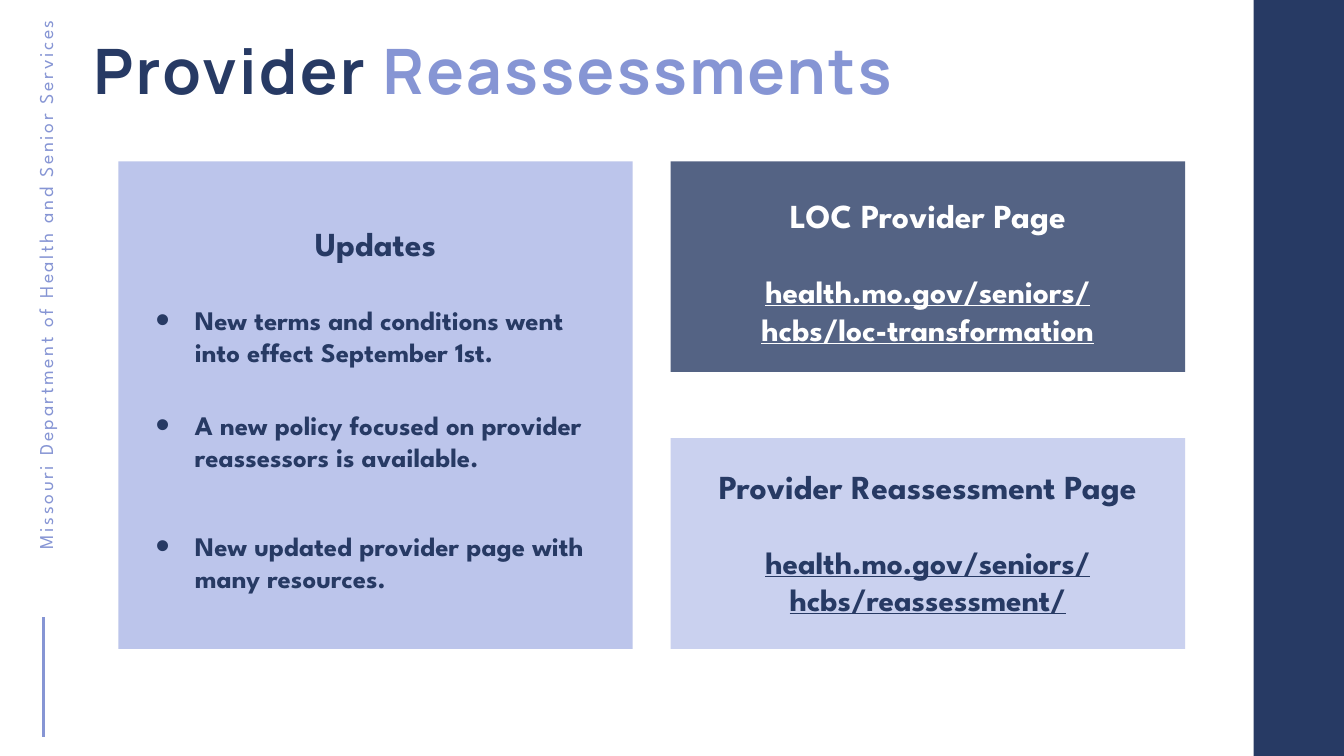
from lxml.etree import SubElement
from pptx import Presentation
from pptx.dml.color import RGBColor
from pptx.enum.shapes import MSO_CONNECTOR as Connector, MSO_SHAPE as Shape
from pptx.enum.text import MSO_ANCHOR as Anchor, MSO_AUTO_SIZE as AutoSize, PP_ALIGN as Align
from pptx.oxml.ns import qn
from pptx.util import Pt

NAVY, PERIWINKLE, LAVENDER, WHITE = "273A64", "8695D4", "BCC5EB", "FFFFFF"
WIDTH, HEIGHT = 768, 432
PANEL_TOP, PANEL_WIDTH, PANEL_HEIGHT = 92.2, 293.9, 278.6
LEFT_PANEL, RIGHT_PANEL = 67.6, 383.3
CARD_HEIGHT = 120.4
LOWER_CARD_TOP = PANEL_TOP + PANEL_HEIGHT - CARD_HEIGHT


def color(value):
    return RGBColor.from_string(value)


class SlideBuilder:
    font = "League Spartan"
    title_font = "Manrope"

    def __init__(self, slide):
        self.slide = slide
        self.shapes = slide.shapes

    def place(self, shape, left, top, width, height, inset=2):
        shape.left, shape.top = Pt(left), Pt(top)
        shape.width, shape.height = Pt(width), Pt(height)
        frame = shape.text_frame
        frame.word_wrap, frame.auto_size = True, AutoSize.NONE
        frame.vertical_anchor = Anchor.TOP
        frame.margin_left = frame.margin_right = frame.margin_bottom = 0
        frame.margin_top = Pt(inset)
        return frame

    def format(self, paragraph, leading, align=Align.LEFT, before=0):
        paragraph.alignment = align
        paragraph.line_spacing = Pt(leading)
        paragraph.space_before = Pt(before)

    def run(self, paragraph, words, size, ink, bold=True, underline=False,
            tracking=0, font=None):
        """Add one run; tracking is the letter spacing in points."""
        run = paragraph.add_run()
        run.text = words
        run.font.name, run.font.size = font or self.font, Pt(size)
        run.font.bold, run.font.underline = bold, underline
        run.font.color.rgb = color(ink)
        if tracking:
            run.font._element.set("spc", str(round(tracking * 100)))

    def title(self, parts):
        frame = self.place(self.shapes.title, 53.3, 17.3, 590.4, 38.9, inset=4.3)
        heading = frame.paragraphs[0]
        self.format(heading, 39.4)
        for words, ink in parts:
            self.run(heading, words, 35.8, ink, tracking=1.4, font=self.title_font)

    def panel(self, left, top, width, height, fill, opacity=100):
        panel = self.shapes.add_shape(Shape.RECTANGLE, Pt(left), Pt(top), Pt(width), Pt(height))
        panel.shadow.inherit = False
        panel.line.fill.background()
        panel.fill.solid()
        panel.fill.fore_color.rgb = color(fill)
        if opacity < 100:
            tint = panel._element.spPr.find(qn("a:solidFill"))[0]
            SubElement(tint, qn("a:alpha"), val=str(opacity * 1000))

    def text(self, words, left, top, width, height, size, leading, ink,
             align=Align.CENTER, rotation=0, **style):
        box = self.shapes.add_textbox(0, 0, 0, 0)
        paragraph = self.place(box, left, top, width, height).paragraphs[0]
        box.rotation = rotation
        self.format(paragraph, leading, align)
        self.run(paragraph, words, size, ink, **style)

    def heading(self, words, panel_left, top, ink):
        self.text(words, panel_left, top, PANEL_WIDTH, 22.3, 19.2, 23.1, ink)

    def card(self, top, fill, ink, heading, address):
        self.panel(RIGHT_PANEL, top, PANEL_WIDTH, CARD_HEIGHT, fill, opacity=79)
        offset = 17.3 if ink == WHITE else 13.6
        self.heading(heading, RIGHT_PANEL, top + offset, ink)
        self.text(address, RIGHT_PANEL + 31, top + offset + 44.3, 231.8, 41.8,
                  17.9, 21.4, ink, underline=True)

    def bullets(self, items):
        """Fill the body placeholder and bring it in front of its panel."""
        body = self.slide.placeholders[1]
        self.shapes._spTree.append(body._element)
        frame = self.place(body, 86.4, 172.1, 257.8, 165, inset=1.5)
        for index, (words, before) in enumerate(items):
            item = frame.add_paragraph() if index else frame.paragraphs[0]
            self.format(item, 18.3, before=before)
            self.run(item, words, 15.3, NAVY)
            props = item._p.get_or_add_pPr()
            props.set("marL", str(Pt(25)))
            props.set("indent", str(Pt(-22.5)))
            SubElement(props, qn("a:buSzPct"), val="150000")
            SubElement(props, qn("a:buFont"), typeface="Arial")
            SubElement(props, qn("a:buChar"), char="•")

    def rule(self, x, top, bottom):
        rule = self.shapes.add_connector(Connector.STRAIGHT, Pt(x), Pt(top), Pt(x), Pt(bottom))
        rule.line.color.rgb = color(PERIWINKLE)
        rule.line.width = Pt(1.8)
        SubElement(rule._element.spPr, qn("a:effectLst"))


def main():
    deck = Presentation()
    deck.slide_width, deck.slide_height = Pt(WIDTH), Pt(HEIGHT)
    page = SlideBuilder(deck.slides.add_slide(deck.slide_layouts[1]))

    page.title([("Provider", NAVY), (" Reassessments", PERIWINKLE)])
    page.rule(25, 352.8, 421.2)
    page.text("Missouri Department of Health and Senior Services",
              -147.6, 178.6, 345.6, 11.5, 11.2, 11.2, PERIWINKLE,
              align=Align.RIGHT, rotation=270, bold=False, tracking=1.5)
    page.panel(716.4, 0, WIDTH - 716.4, HEIGHT, NAVY)

    page.panel(LEFT_PANEL, PANEL_TOP, PANEL_WIDTH, PANEL_HEIGHT, LAVENDER)
    page.heading("Updates", LEFT_PANEL, 125.3, NAVY)
    page.bullets([
        ("New terms and conditions went into effect September 1st.", 0),
        ("A new policy focused on provider reassessors is available.", 23.4),
        ("New updated provider page with many resources.", 32.6),
    ])

    page.card(PANEL_TOP, NAVY, WHITE, "LOC Provider Page",
              "health.mo.gov/seniors/hcbs/loc-transformation")
    page.card(LOWER_CARD_TOP, LAVENDER, NAVY, "Provider Reassessment Page",
              "health.mo.gov/seniors/hcbs/reassessment/")
    deck.save("out.pptx")


if __name__ == "__main__":
    main()
